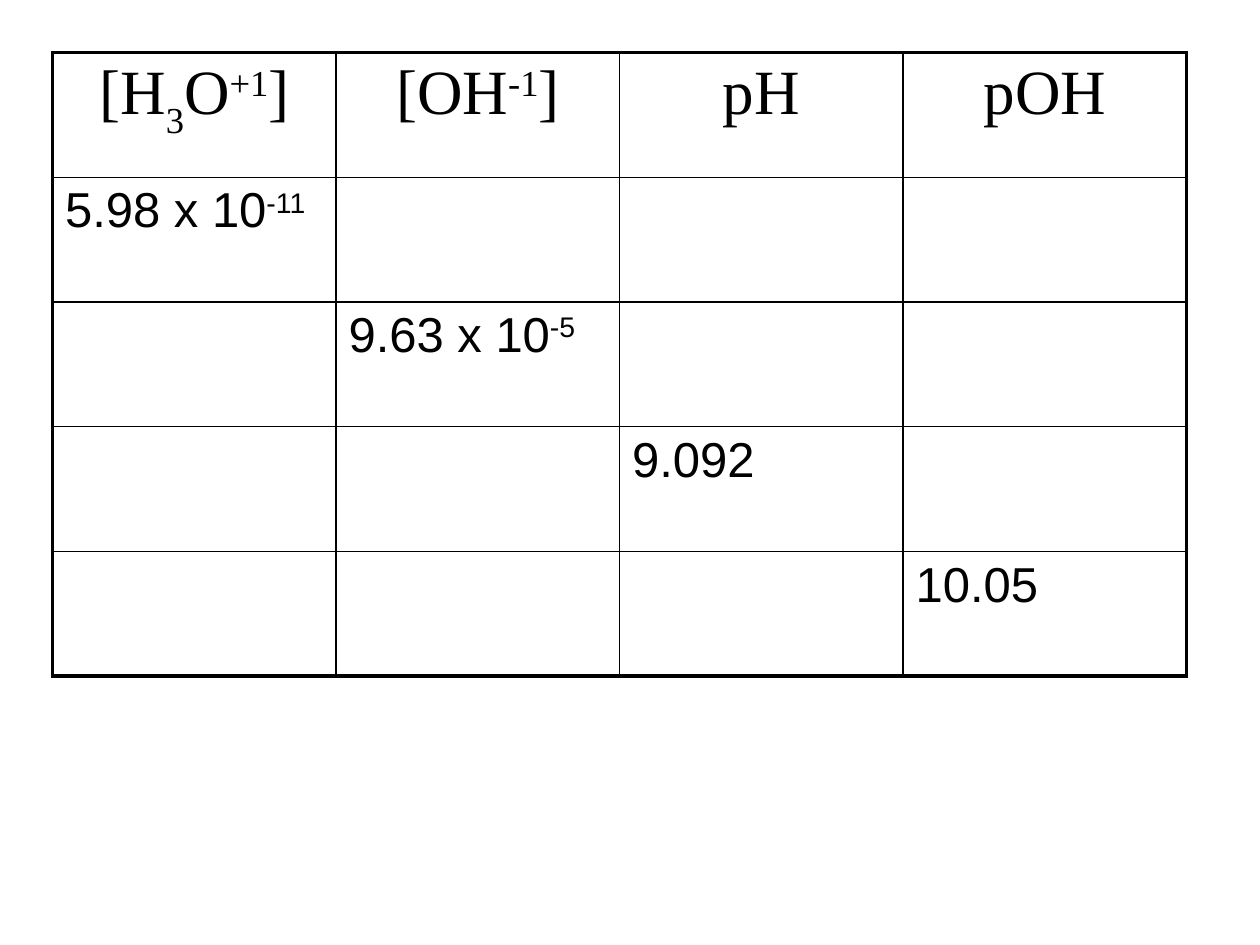
from dataclasses import dataclass

from lxml.etree import SubElement
from pptx import Presentation
from pptx.dml.color import RGBColor
from pptx.enum.text import PP_ALIGN
from pptx.oxml.ns import qn
from pptx.util import Cm, Pt


@dataclass(frozen=True)
class Theme:
    ink: str = "000000"
    header_font: str = "Times New Roman"
    header_size: int = 36
    body_font: str = "Arial"
    body_size: int = 28
    outer_line: float = 2.25
    inner_line: float = 1


# Each cell is a list of (text, baseline shift in percent) pieces.
HEADERS = [
    [("[H", 0), ("3", -30), ("O", 0), ("+1", 30), ("]", 0)],
    [("[OH", 0), ("-1", 30), ("]", 0)],
    [("pH", 0)],
    [("pOH", 0)],
]
# Each problem row gives one known value, one column further right each time.
KNOWN_VALUES = [
    [("5.98 x 10", 0), ("-11", 30)],
    [("9.63 x 10", 0), ("-5", 30)],
    [("9.092", 0)],
    [("10.05", 0)],
]


class SlideBuilder:
    def __init__(self, slide, theme):
        self.slide = slide
        self.theme = theme

    def add_grid(self, left, top, width, height, row_count, column_count):
        """Add an unfilled table with equal cells and a heavier outer frame."""
        frame = self.slide.shapes.add_table(
            row_count, column_count, left, top, width, height)
        table = frame.table
        table.first_row = False
        table.horz_banding = False
        for column in table.columns:
            column.width = width // column_count
        for row in table.rows:
            row.height = height // row_count
        for row in range(row_count):
            for column in range(column_count):
                cell = table.cell(row, column)
                on_frame = {
                    "a:lnL": column == 0,
                    "a:lnR": column == column_count - 1,
                    "a:lnT": row == 0,
                    "a:lnB": row == row_count - 1,
                }
                self.set_borders(cell, on_frame)
                cell.fill.background()
        return table

    def set_borders(self, cell, on_frame):
        properties = cell._tc.get_or_add_tcPr()
        for tag, is_outer in on_frame.items():
            weight = self.theme.outer_line if is_outer else self.theme.inner_line
            line = SubElement(properties, qn(tag), w=str(Pt(weight)))
            fill = SubElement(line, qn("a:solidFill"))
            SubElement(fill, qn("a:srgbClr"), val=self.theme.ink)

    def write_cell(self, cell, pieces, font_format, alignment):
        paragraph = cell.text_frame.paragraphs[0]
        paragraph.alignment = alignment
        for text, baseline in pieces:
            run = paragraph.add_run()
            run.text = text
            for name, value in font_format.items():
                setattr(run.font, name, value)
            run.font.color.rgb = RGBColor.from_string(self.theme.ink)
            if baseline:
                run.font._element.set("baseline", str(baseline * 1000))

    def write_header(self, cell, pieces):
        header_format = {"name": self.theme.header_font,
                         "size": Pt(self.theme.header_size), "bold": False}
        self.write_cell(cell, pieces, header_format, PP_ALIGN.CENTER)

    def write_value(self, cell, pieces):
        value_format = {"name": self.theme.body_font,
                        "size": Pt(self.theme.body_size), "bold": False}
        self.write_cell(cell, pieces, value_format, PP_ALIGN.LEFT)


def main():
    presentation = Presentation()
    presentation.slide_width = Cm(25.4)
    presentation.slide_height = Cm(19.05)
    slide = presentation.slides.add_slide(presentation.slide_layouts[6])
    builder = SlideBuilder(slide, Theme())

    table = builder.add_grid(Cm(1.06), Cm(1.06), Cm(22.86), Cm(12.57),
                             len(KNOWN_VALUES) + 1, len(HEADERS))
    for column, pieces in enumerate(HEADERS):
        builder.write_header(table.cell(0, column), pieces)
    for index, pieces in enumerate(KNOWN_VALUES):
        builder.write_value(table.cell(index + 1, index), pieces)

    presentation.save("out.pptx")


if __name__ == "__main__":
    main()
